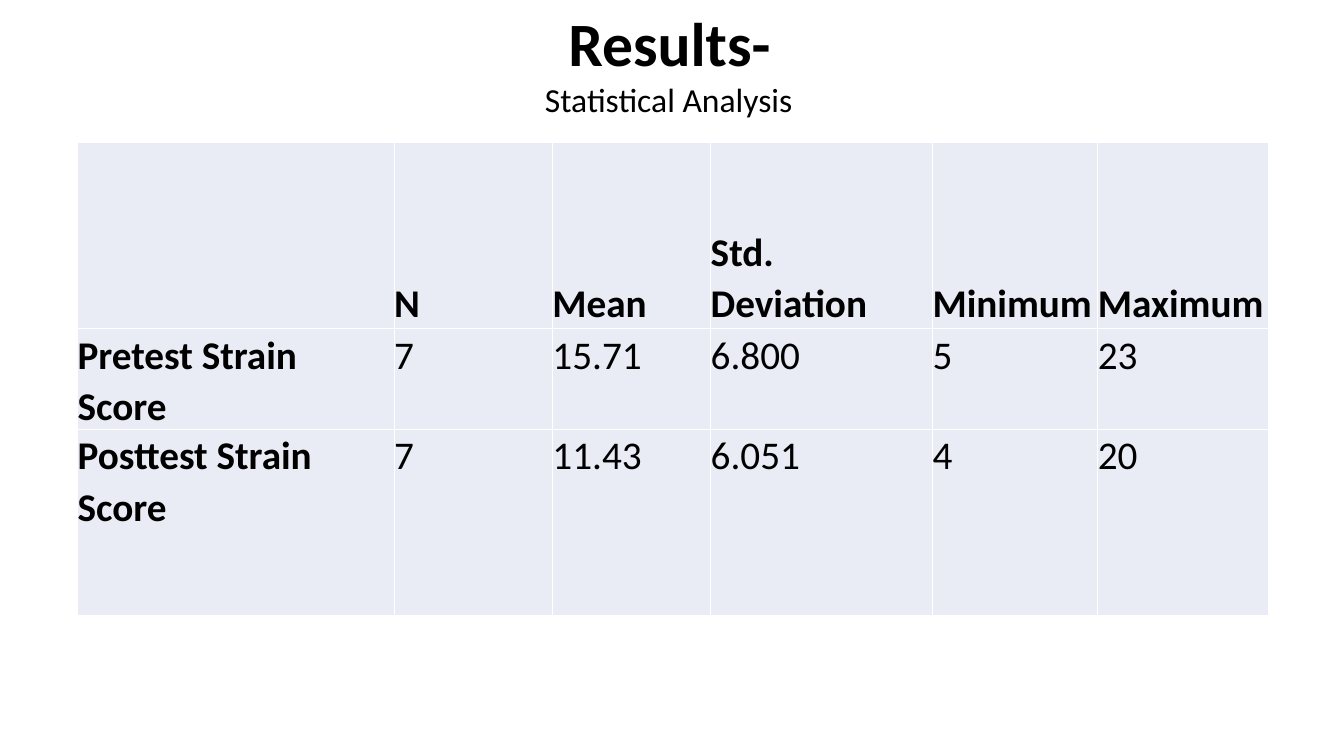
from dataclasses import dataclass

import lxml.etree
import pptx
import pptx.dml.color
import pptx.enum.text
import pptx.oxml.ns
import pptx.util

Inches = pptx.util.Inches
Pt = pptx.util.Pt
RGBColor = pptx.dml.color.RGBColor
Anchor = pptx.enum.text.MSO_ANCHOR


@dataclass(frozen=True)
class Theme:
    font: str = "Calibri"
    text: str = "000000"
    cell: str = "E9EBF5"
    border: str = "FFFFFF"
    title_size: int = 44
    break_size: int = 18
    subtitle_size: int = 24
    table_size: int = 28


@dataclass(frozen=True)
class ResultRow:
    height: float
    cells: tuple[str, ...]
    header: bool = False


THEME = Theme()
COLUMN_WIDTHS = (3.14, 1.57, 1.57, 2.2, 1.64, 1.69)
RESULT_ROWS = (
    ResultRow(1.85, ("", "N", "Mean", "Std. Deviation", "Minimum", "Maximum"), header=True),
    ResultRow(0.57, ("Pretest Strain Score", "7", "15.71", "6.800", "5", "23")),
    ResultRow(1.85, ("Posttest Strain Score", "7", "11.43", "6.051", "4", "20")),
)


def set_attributes(target: object, values: dict[str, object]) -> None:
    for name, value in values.items():
        setattr(target, name, value)


def add_run(paragraph, text: str, size: int, bold: bool) -> None:
    run = paragraph.add_run()
    run.text = text
    set_attributes(run.font, {"name": THEME.font, "size": Pt(size), "bold": bold})
    run.font.color.rgb = RGBColor.from_string(THEME.text)


def add_borders(cell) -> None:
    properties = cell._tc.get_or_add_tcPr()
    qualified = pptx.oxml.ns.qn
    for side in ("a:lnL", "a:lnR", "a:lnT", "a:lnB"):
        line = lxml.etree.SubElement(properties, qualified(side), w=str(Pt(1)))
        fill = lxml.etree.SubElement(line, qualified("a:solidFill"))
        lxml.etree.SubElement(fill, qualified("a:srgbClr"), val=THEME.border)


def fill_cell(cell, text: str, bold: bool, anchor: Anchor) -> None:
    add_borders(cell)
    cell.fill.solid()
    cell.fill.fore_color.rgb = RGBColor.from_string(THEME.cell)
    if not text:
        return
    set_attributes(cell, {
        "margin_left": 0, "margin_right": 0, "margin_top": 0, "margin_bottom": 0,
        "vertical_anchor": anchor,
    })
    paragraph = cell.text_frame.paragraphs[0]
    set_attributes(paragraph, {"line_spacing": 1.07, "space_after": Pt(8)})
    add_run(paragraph, text, THEME.table_size, bold)


def add_results_table(slide) -> None:
    table = slide.shapes.add_table(
        len(RESULT_ROWS), len(COLUMN_WIDTHS), Inches(0.77), Inches(1.41),
        Inches(sum(COLUMN_WIDTHS)), Inches(sum(row.height for row in RESULT_ROWS)),
    ).table
    set_attributes(table, {"first_row": False, "horz_banding": False})
    for column, width in zip(table.columns, COLUMN_WIDTHS):
        column.width = Inches(width)
    for table_row, result in zip(table.rows, RESULT_ROWS):
        table_row.height = Inches(result.height)
        anchor = Anchor.BOTTOM if result.header else Anchor.TOP
        for index, (cell, text) in enumerate(zip(table_row.cells, result.cells)):
            fill_cell(cell, text, result.header or index == 0, anchor)


def format_title(title) -> None:
    set_attributes(title, {
        "left": Inches(3.16), "top": Inches(0), "width": Inches(7.02), "height": Inches(1.25),
    })
    set_attributes(title.text_frame, {
        "word_wrap": True, "vertical_anchor": Anchor.TOP,
        "auto_size": pptx.enum.text.MSO_AUTO_SIZE.SHAPE_TO_FIT_TEXT,
    })
    paragraph = title.text_frame.paragraphs[0]
    paragraph.alignment = pptx.enum.text.PP_ALIGN.CENTER
    add_run(paragraph, "Results-", THEME.title_size, True)
    add_run(paragraph, " ", THEME.break_size, True)
    paragraph.add_line_break()
    add_run(paragraph, "Statistical Analysis ", THEME.subtitle_size, False)


def main() -> None:
    presentation = pptx.Presentation()
    set_attributes(presentation, {"slide_width": Inches(13.33), "slide_height": Inches(7.5)})
    title_only = presentation.slide_layouts.get_by_name("Title Only")
    slide = presentation.slides.add_slide(title_only)
    add_results_table(slide)
    format_title(slide.shapes.title)
    presentation.save("out.pptx")


if __name__ == "__main__":
    main()
